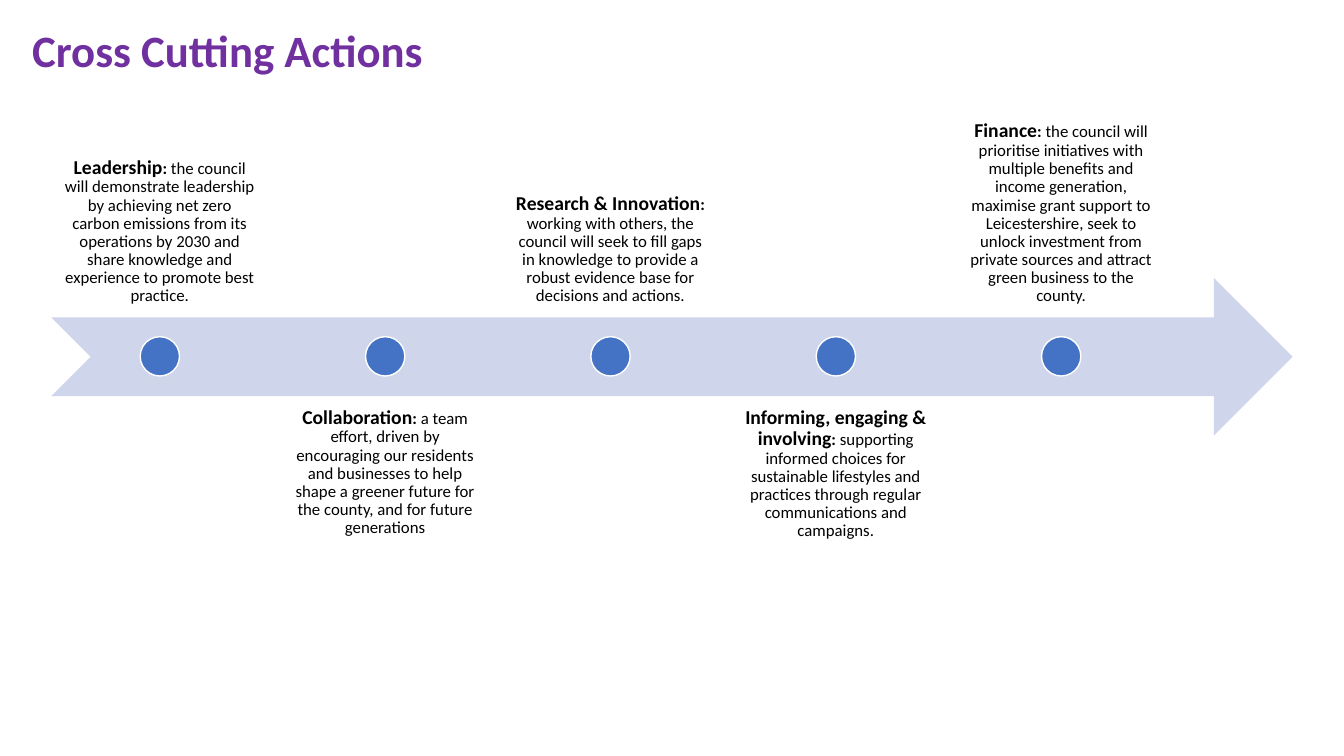
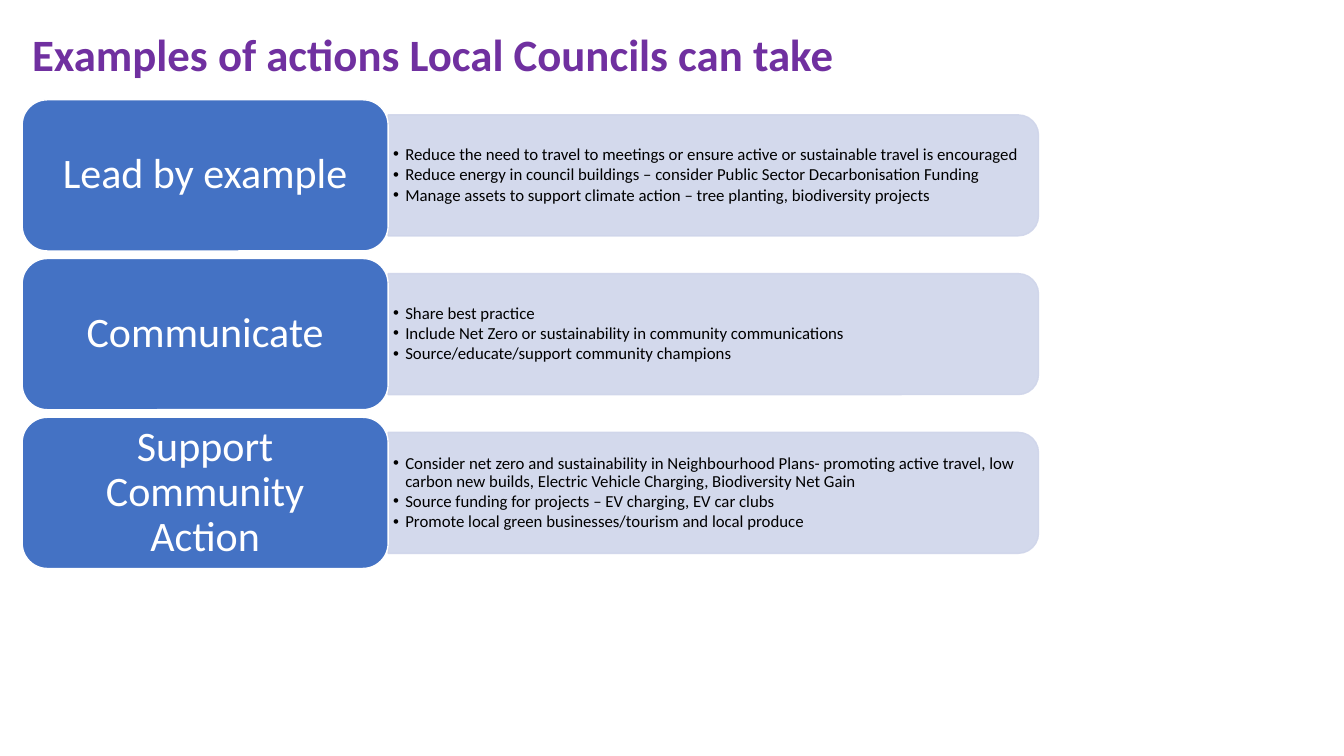
from lxml.etree import SubElement
from pptx import Presentation
from pptx.dml.color import RGBColor
from pptx.enum.shapes import MSO_SHAPE
from pptx.enum.text import MSO_ANCHOR, PP_ALIGN
from pptx.oxml.ns import qn
from pptx.util import Inches, Pt

PURPLE = RGBColor(0x70, 0x30, 0xA0)
BLUE = RGBColor(0x44, 0x72, 0xC4)
PALE_BLUE = RGBColor(0xCF, 0xD5, 0xEA)
WHITE = RGBColor(0xFF, 0xFF, 0xFF)
BLACK = RGBColor(0x00, 0x00, 0x00)
FONT = "Calibri"
TIGHT = 0.9

STAGES = [
    ("Leadership", "the council will demonstrate leadership by achieving net zero carbon emissions "
     "from its operations by 2030 and share knowledge and experience to promote best practice."),
    ("Collaboration", "a team effort, driven by encouraging our residents and businesses to help "
     "shape a greener future for the county, and for future generations"),
    ("Research & Innovation", "working with others, the council will seek to fill gaps in knowledge "
     "to provide a robust evidence base for decisions and actions."),
    ("Informing, engaging & involving", "supporting informed choices for sustainable lifestyles and "
     "practices through regular communications and campaigns."),
    ("Finance", "the council will prioritise initiatives with multiple benefits and income "
     "generation, maximise grant support to Leicestershire, seek to unlock investment from private "
     "sources and attract green business to the county."),
]

ACTIONS = [
    ("Lead by example", [
        "Reduce the need to travel to meetings or ensure active or sustainable travel is encouraged",
        "Reduce energy in council buildings – consider Public Sector Decarbonisation Funding",
        "Manage assets to support climate action – tree planting, biodiversity projects",
    ]),
    ("Communicate", [
        "Share best practice",
        "Include Net Zero or sustainability in community communications",
        "Source/educate/support community champions",
    ]),
    ("Support Community Action", [
        "Consider net zero and sustainability in Neighbourhood Plans- promoting active travel, low "
        "carbon new builds, Electric Vehicle Charging, Biodiversity Net Gain",
        "Source funding for projects – EV charging, EV car clubs",
        "Promote local green businesses/tourism and local produce",
    ]),
]


class SlideBuilder:
    def __init__(self):
        self.deck = Presentation()
        self.deck.slide_width = Inches(13.33)
        self.deck.slide_height = Inches(7.5)
        self.page = None

    def add_page(self):
        self.page = self.deck.slides.add_slide(self.deck.slide_layouts[6])

    def frame(self, shape, anchor, inset_x, inset_y):
        frame = shape.text_frame
        frame.word_wrap = True
        frame.vertical_anchor = anchor
        frame.margin_left = frame.margin_right = Inches(inset_x)
        frame.margin_top = frame.margin_bottom = Inches(inset_y)
        return frame

    def textbox(self, left, top, width, height, anchor, inset_x, inset_y):
        box = self.page.shapes.add_textbox(
            Inches(left), Inches(top), Inches(width), Inches(height))
        return self.frame(box, anchor, inset_x, inset_y)

    def span(self, para, text, size, color, bold=False):
        span = para.add_run()
        span.text = text
        span.font.name = FONT
        span.font.size = Pt(size)
        span.font.bold = bold
        span.font.color.rgb = color

    def title(self, text, top, width, height, spacing):
        frame = self.textbox(0.22, top, width, height, MSO_ANCHOR.MIDDLE, 0.1, 0.05)
        para = frame.paragraphs[0]
        para.line_spacing = spacing
        self.span(para, text, 32, PURPLE, True)

    def shape(self, kind, left, top, width, height, fill, line=None):
        shape = self.page.shapes.add_shape(
            kind, Inches(left), Inches(top), Inches(width), Inches(height))
        shape.shadow.inherit = False
        shape.fill.solid()
        shape.fill.fore_color.rgb = fill
        if line is None:
            shape.line.fill.background()
        else:
            shape.line.color.rgb = line
            shape.line.width = Pt(1)
        return shape

    def stage_text(self, left, top, anchor, name, detail):
        frame = self.textbox(left, top, 2.13, 1.56, anchor, 0.11, 0.11)
        para = frame.paragraphs[0]
        para.alignment = PP_ALIGN.CENTER
        para.line_spacing = TIGHT
        self.span(para, name, 14, BLACK, True)
        self.span(para, ": ", 12, BLACK, True)
        self.span(para, detail, 12, BLACK)

    def band(self, left, top, width, height):
        band = self.shape(MSO_SHAPE.ROUND_2_SAME_RECTANGLE,
                          left + (width - height) / 2, top + (height - width) / 2,
                          height, width, PALE_BLUE, PALE_BLUE)
        band.rotation = 90
        for color in band._element.spPr.iter(qn("a:srgbClr")):
            SubElement(color, qn("a:alpha"), val="90000")

    def bullets(self, left, top, width, height, items):
        frame = self.textbox(left, top, width, height, MSO_ANCHOR.MIDDLE, 0.05, 0.03)
        for index, item in enumerate(items):
            para = frame.add_paragraph() if index else frame.paragraphs[0]
            para.line_spacing = TIGHT
            para.space_after = Pt(1.5)
            properties = para._p.get_or_add_pPr()
            properties.set("marL", str(Inches(0.12)))
            properties.set("indent", str(-Inches(0.12)))
            SubElement(properties, qn("a:buFont"), typeface="Arial")
            SubElement(properties, qn("a:buChar"), char="•")
            self.span(para, item, 12, BLACK)

    def card(self, left, top, width, height, text):
        card = self.shape(MSO_SHAPE.ROUNDED_RECTANGLE, left, top, width, height, BLUE, WHITE)
        para = self.frame(card, MSO_ANCHOR.MIDDLE, 0.19, 0.13).paragraphs[0]
        para.alignment = PP_ALIGN.CENTER
        para.line_spacing = TIGHT
        self.span(para, text, 30, WHITE)


def build_timeline(builder):
    builder.add_page()
    builder.title("Cross Cutting Actions", 0.28, 11.5, 0.49, TIGHT)
    builder.shape(MSO_SHAPE.NOTCHED_RIGHT_ARROW, 0.51, 2.76, 12.31, 1.56, PALE_BLUE)
    pitch = (9.46 - 0.52) / (len(STAGES) - 1)
    for index, (name, detail) in enumerate(STAGES):
        left = 0.52 + index * pitch
        above = index % 2 == 0
        top, anchor = (1.58, MSO_ANCHOR.BOTTOM) if above else (3.93, MSO_ANCHOR.TOP)
        builder.stage_text(left, top, anchor, name, detail)
        builder.shape(MSO_SHAPE.OVAL, left + 0.87, 3.34, 0.39, 0.39, BLUE, WHITE)


def build_examples(builder):
    builder.add_page()
    builder.title("Examples of actions Local Councils can take", 0.21, 12.95, 0.64, 1.0)
    pitch = (4.14 - 0.99) / (len(ACTIONS) - 1)
    for index, (name, items) in enumerate(ACTIONS):
        top = 0.99 + index * pitch
        builder.band(3.85, top + 0.15, 6.45, 1.2)
        builder.bullets(3.85, top + 0.21, 6.4, 1.08, items)
        builder.card(0.22, top, 3.63, 1.5, name)


def main():
    builder = SlideBuilder()
    build_timeline(builder)
    build_examples(builder)
    builder.deck.save("out.pptx")


if __name__ == "__main__":
    main()
